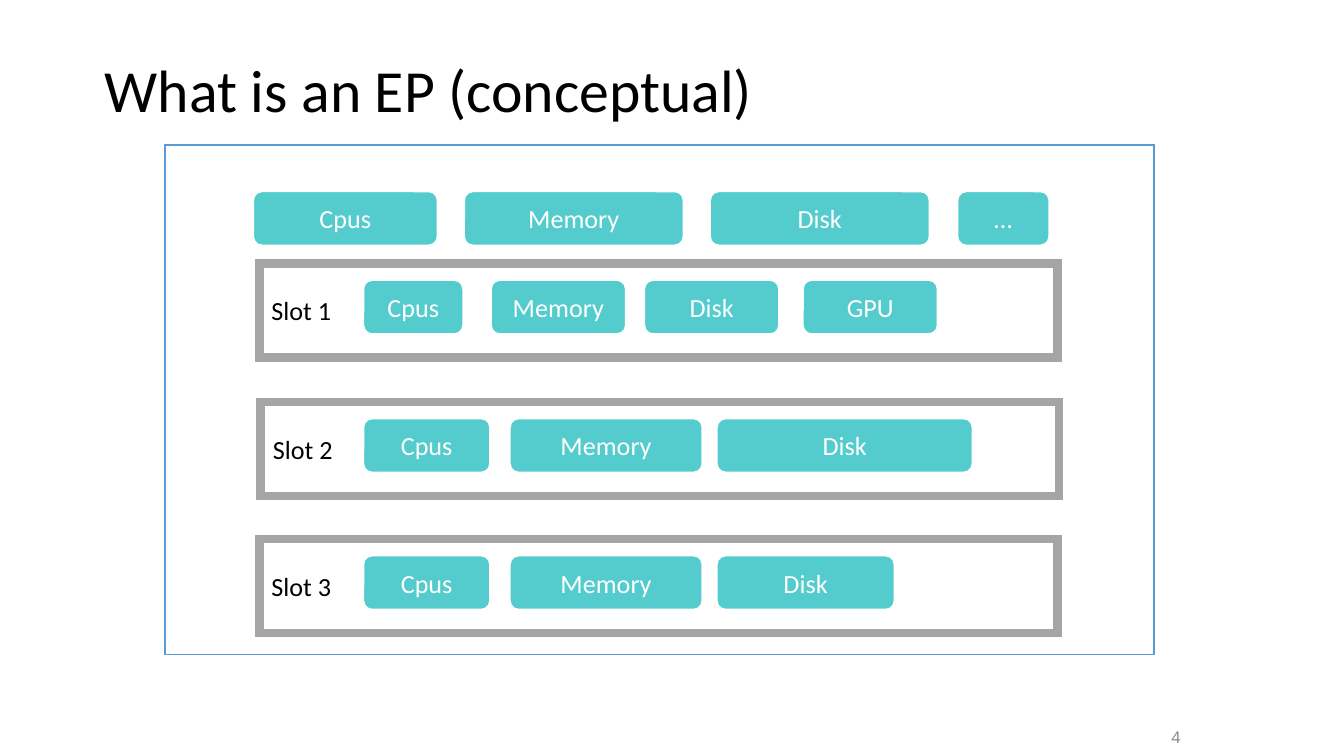
from lxml import etree
from pptx import Presentation
from pptx.dml.color import RGBColor
from pptx.enum.shapes import MSO_SHAPE
from pptx.enum.text import MSO_ANCHOR, PP_ALIGN
from pptx.oxml.ns import qn
from pptx.util import Inches, Pt

RECTANGLE, ROUNDED = MSO_SHAPE.RECTANGLE, MSO_SHAPE.ROUNDED_RECTANGLE
LEFT, CENTER = PP_ALIGN.LEFT, PP_ALIGN.CENTER
MIDDLE, BOTTOM = MSO_ANCHOR.MIDDLE, MSO_ANCHOR.BOTTOM
TITLE_ONLY = 5

COLORS = {
    "black": "000000",
    "white": "FFFFFF",
    "grey": "8C8C8C",
    "frame": "5B9BD5",
    "slot": "A5A5A5",
    "resource": "54CCCD",
}

SLIDE_WIDTH = 10
SLIDE_HEIGHT = SLIDE_WIDTH * 9 / 16
RESOURCE_HEIGHT = 0.41
SLOT_WIDTH, SLOT_HEIGHT = 5.94, 0.7
RESOURCE_OFFSET = 0.12

# Each resource is (name, left, width).
ENDPOINT_RESOURCES = [
    ("Cpus", 1.88, 1.38), ("Memory", 3.45, 1.64),
    ("Disk", 5.28, 1.64), ("…", 7.12, 0.69),
]
# Each slot is (left, top, resources).
SLOTS = [
    (1.93, 1.96, [("Cpus", 2.7, 0.75), ("Memory", 3.65, 1.01),
                  ("Disk", 4.79, 1.01), ("GPU", 5.97, 1.01)]),
    (1.94, 2.99, [("Cpus", 2.7, 0.95), ("Memory", 3.79, 1.44),
                  ("Disk", 5.33, 1.91)]),
    (1.93, 4.01, [("Cpus", 2.7, 0.95), ("Memory", 3.79, 1.44),
                  ("Disk", 5.33, 1.33)]),
]


def color(name):
    return RGBColor.from_string(COLORS[name])


def write_text(shape, text, *, size=14, font="Calibri", color_name="black",
               align=LEFT, anchor=MIDDLE, line_spacing=1.0):
    frame = shape.text_frame
    frame.word_wrap = True
    frame.vertical_anchor = anchor
    frame.margin_left = frame.margin_right = Inches(0.09)
    frame.margin_top = frame.margin_bottom = Inches(0.04)
    paragraph = frame.paragraphs[0]
    paragraph.alignment = align
    paragraph.line_spacing = line_spacing
    run = paragraph.add_run()
    run.text = text
    run.font.size = Pt(size)
    run.font.name = font
    run.font.color.rgb = color(color_name)


def add_box(slide, kind, left, top, width, height, *, fill, line, line_width):
    """Add a filled shape whose outline has square corners."""
    shape = slide.shapes.add_shape(
        kind, Inches(left), Inches(top), Inches(width), Inches(height))
    shape.shadow.inherit = False
    shape.fill.solid()
    shape.fill.fore_color.rgb = color(fill)
    shape.line.color.rgb = color(line)
    shape.line.width = Pt(line_width)
    outline = shape.element.spPr.find(qn("a:ln"))
    etree.SubElement(outline, qn("a:miter"), lim="800000")
    return shape


def add_resources(slide, resources, top):
    for name, left, width in resources:
        shape = add_box(slide, ROUNDED, left, top, width, RESOURCE_HEIGHT,
                        fill="resource", line="white", line_width=1.5)
        write_text(shape, name, color_name="white", align=CENTER)


def add_slot(slide, number, left, top, resources):
    shape = add_box(slide, RECTANGLE, left, top, SLOT_WIDTH, SLOT_HEIGHT,
                    fill="white", line="slot", line_width=4.5)
    write_text(shape, f"Slot {number}")
    add_resources(slide, resources, top + RESOURCE_OFFSET)


def add_title(slide, text):
    title = slide.shapes.title
    title.left, title.top = Inches(0.69), Inches(0.3)
    title.width, title.height = Inches(8.62), Inches(0.79)
    write_text(title, text, size=32, line_spacing=0.9)


def add_slide_number(slide, text):
    box = slide.shapes.add_textbox(
        Inches(8.19), Inches(5.3), Inches(1.12), Inches(0.3))
    write_text(box, text, size=9, font="Arial", color_name="grey",
               align=CENTER, anchor=BOTTOM)


def main():
    presentation = Presentation()
    presentation.slide_width = Inches(SLIDE_WIDTH)
    presentation.slide_height = Inches(SLIDE_HEIGHT)
    slide = presentation.slides.add_slide(presentation.slide_layouts[TITLE_ONLY])

    add_title(slide, "What is an EP (conceptual)")
    add_slide_number(slide, "4")
    add_box(slide, RECTANGLE, 1.23, 1.08, 7.36, 3.79,
            fill="white", line="frame", line_width=1)
    add_resources(slide, ENDPOINT_RESOURCES, 1.42)
    for number, (left, top, resources) in enumerate(SLOTS, start=1):
        add_slot(slide, number, left, top, resources)

    presentation.save("out.pptx")


if __name__ == "__main__":
    main()
